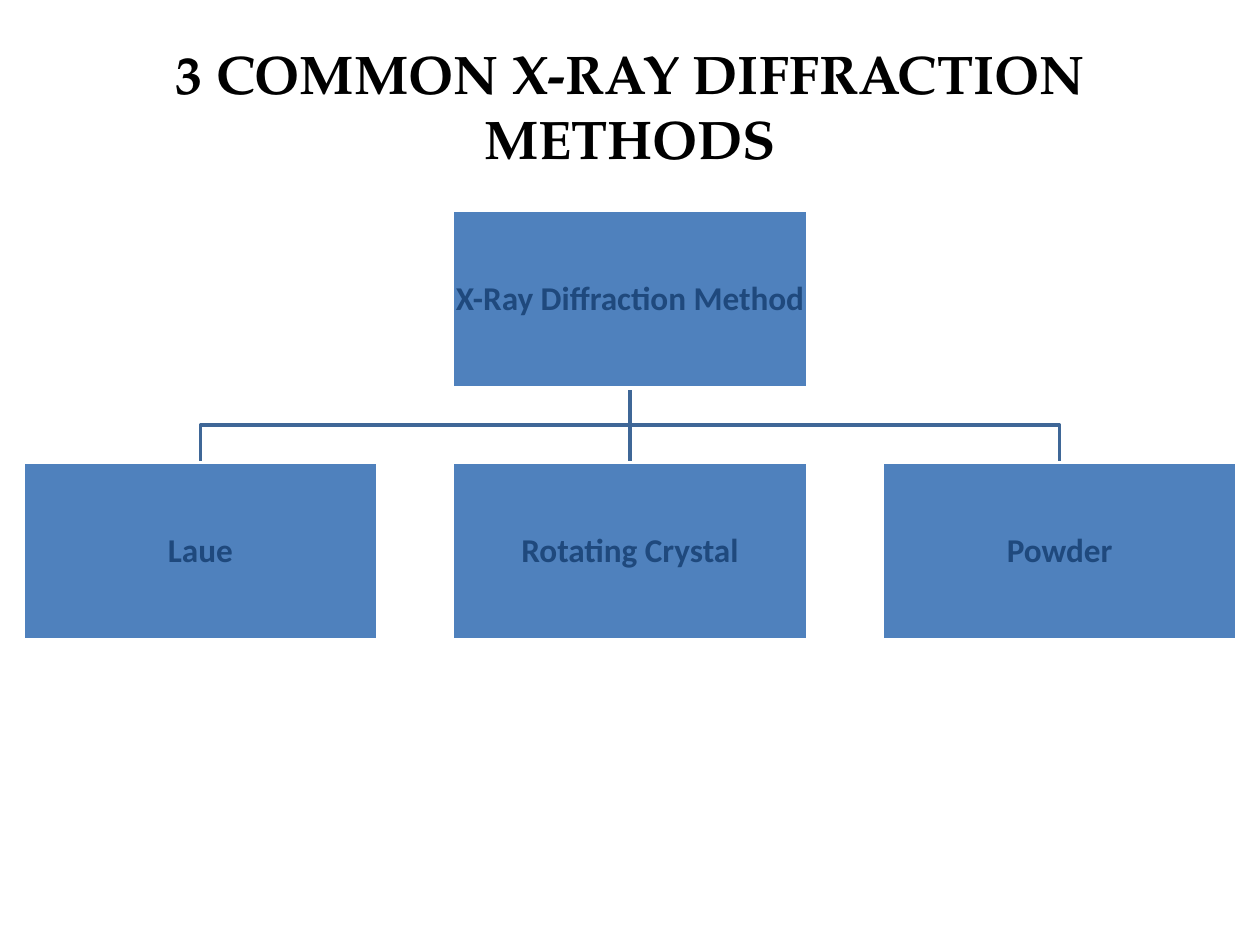
"""Build a slide showing the three common X-ray diffraction methods as a tree."""
from dataclasses import dataclass

from pptx import Presentation
from pptx import util as u
from pptx.dml.color import RGBColor
from pptx.enum import shapes, text
from pptx.oxml.ns import qn
from lxml import etree

COLORS = {
    "title": "000000",
    "box": "4F81BD",
    "outline": "FFFFFF",
    "label": "1F497D",
    "branch": "3F6797",
}
BOX_WIDTH, BOX_HEIGHT = 203, 101.5
CENTER, PITCH = 360, 245.5
ROOT_TOP, METHOD_TOP = 120.25, 264.25
METHODS = ("Laue", "Rotating Crystal", "Powder")
TITLE_FORMAT = {"name": "TeX Gyre Pagella", "size": u.Pt(31), "bold": True}
LABEL_FORMAT = {"name": "Calibri", "size": u.Pt(19), "bold": True}


@dataclass(frozen=True)
class Node:
    label: str
    center: float
    top: float

    @property
    def bottom(self) -> float:
        return self.top + BOX_HEIGHT


def color(name: str) -> RGBColor:
    return RGBColor.from_string(COLORS[name])


def set_attributes(target, values: dict) -> None:
    for attribute, value in values.items():
        setattr(target, attribute, value)


def set_line(line, name: str) -> None:
    line.color.rgb = color(name)
    line.width = u.Pt(2)


def write(frame, wording: str, font_format: dict, color_name: str):
    set_attributes(frame, {"text": wording, "word_wrap": True,
                           "vertical_anchor": text.MSO_ANCHOR.MIDDLE})
    paragraph = frame.paragraphs[0]
    paragraph.alignment = text.PP_ALIGN.CENTER
    set_attributes(paragraph.font, font_format)
    paragraph.font.color.rgb = color(color_name)
    return paragraph


def draw_node(slide, node: Node):
    box = slide.shapes.add_shape(
        shapes.MSO_SHAPE.RECTANGLE, u.Pt(node.center - BOX_WIDTH / 2),
        u.Pt(node.top), u.Pt(BOX_WIDTH), u.Pt(BOX_HEIGHT))
    box.shadow.inherit = False
    box.fill.solid()
    box.fill.fore_color.rgb = color("box")
    set_line(box.line, "outline")
    for side in ("left", "top", "right", "bottom"):
        setattr(box.text_frame, f"margin_{side}", u.Pt(0.75))
    paragraph = write(box.text_frame, node.label, LABEL_FORMAT, "label")
    paragraph.line_spacing = 0.9
    return box


def draw_elbow(slide, parent: Node, child: Node) -> None:
    middle = (parent.bottom + child.top) / 2
    bends = ((parent.center, middle), (child.center, middle), (child.center, child.top))
    builder = slide.shapes.build_freeform(u.Pt(parent.center), u.Pt(parent.bottom))
    builder.add_line_segments([(u.Pt(x), u.Pt(y)) for x, y in bends], close=False)
    branch = builder.convert_to_shape()
    branch.shadow.inherit = False
    branch.fill.background()
    set_line(branch.line, "branch")


def draw_trunk(slide, parent_box, child_box) -> None:
    trunk = slide.shapes.add_connector(shapes.MSO_CONNECTOR.STRAIGHT, 0, 0, 0, 0)
    trunk.begin_connect(parent_box, 2)
    trunk.end_connect(child_box, 0)
    set_line(trunk.line, "branch")
    etree.SubElement(trunk._element.spPr, qn("a:effectLst"))
    parent_box._element.addprevious(trunk._element)


def main() -> None:
    deck = Presentation()
    set_attributes(deck, {"slide_width": u.Pt(720), "slide_height": u.Pt(540)})
    slide = deck.slides.add_slide(deck.slide_layouts[5])
    title = slide.shapes.title
    set_attributes(title, {"left": u.Pt(84), "top": u.Pt(0),
                           "width": u.Pt(552), "height": u.Pt(120)})
    write(title.text_frame, "3 COMMON X-RAY DIFFRACTION METHODS", TITLE_FORMAT, "title")

    root = Node("X-Ray Diffraction Method", CENTER, ROOT_TOP)
    methods = [Node(label, CENTER + (column - 1) * PITCH, METHOD_TOP)
               for column, label in enumerate(METHODS)]
    for outer in (methods[2], methods[0]):
        draw_elbow(slide, root, outer)
    root_box = draw_node(slide, root)
    method_boxes = [draw_node(slide, method) for method in methods]
    draw_trunk(slide, root_box, method_boxes[1])
    deck.save("out.pptx")


if __name__ == "__main__":
    main()
